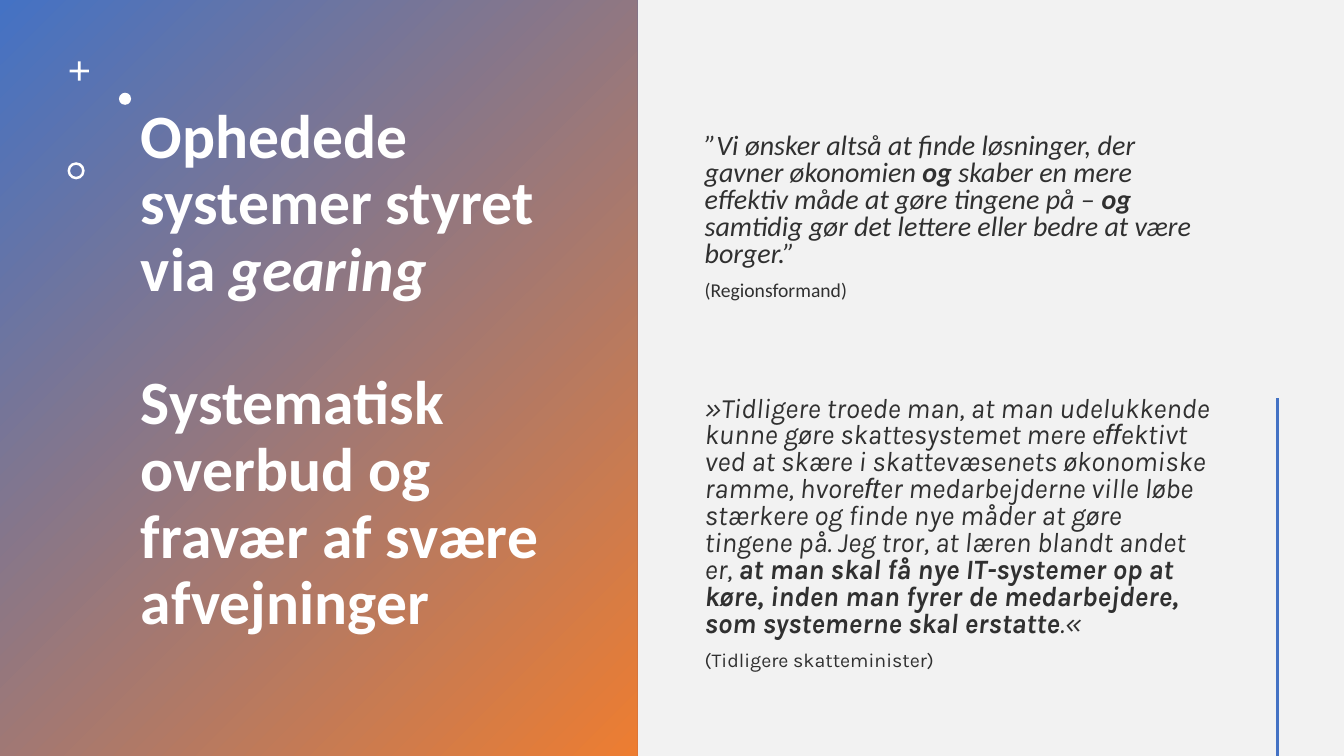
from typing import NamedTuple

from lxml import etree
from pptx import Presentation
from pptx.dml.color import RGBColor
from pptx.enum.shapes import MSO_CONNECTOR, MSO_SHAPE
from pptx.enum.text import MSO_ANCHOR
from pptx.oxml.ns import qn
from pptx.util import Inches, Pt

RECT = MSO_SHAPE.RECTANGLE
CROSS = MSO_SHAPE.CROSS
OVAL = MSO_SHAPE.OVAL
DONUT = MSO_SHAPE.DONUT
LINE = MSO_CONNECTOR.STRAIGHT
TOP = MSO_ANCHOR.TOP
MIDDLE = MSO_ANCHOR.MIDDLE

WHITE, PALE, INK = "FFFFFF", "F2F2F2", "303030"
BLUE, ORANGE = "4472C4", "ED7D31"


class Mark(NamedTuple):
    kind: MSO_SHAPE
    left: float
    top: float
    size: float
    adjust: float | None = None


class Run(NamedTuple):
    text: str
    bold: bool | None = None
    italic: bool | None = None
    font: str | None = None


class Para(NamedTuple):
    runs: list[Run]
    size: int
    font: str = "Calibri"
    bold: bool = False
    italic: bool = False
    before: int = 0


class Block(NamedTuple):
    box: tuple[float, float, float, float]
    anchor: MSO_ANCHOR
    color: str
    space: float
    paras: list[Para]


MARKS = [
    Mark(CROSS, 0.69, 0.61, 0.19, 0.43),
    Mark(OVAL, 1.18, 0.92, 0.12),
    Mark(DONUT, 0.67, 1.61, 0.17, 0.15),
]

TITLE = Block((1.3, 0.42, 4.38, 6.53), MIDDLE, WHITE, 0.9, [
    Para([Run("Ophedede systemer styret via "), Run("gearing", italic=True)], 44, bold=True),
    Para([Run("Systematisk overbud og fravær af svære afvejninger")], 44, bold=True, before=48),
])

QUOTES = Block((6.89, 1.28, 5.22, 5.6), TOP, INK, 0.8, [
    Para([
        Run("”Vi ønsker altså at finde løsninger, der gavner økonomien "),
        Run("og", bold=True),
        Run(" skaber en mere effektiv måde at gøre tingene på – "),
        Run("og", bold=True),
        Run(" samtidig gør det lettere eller bedre at være borger.”"),
    ], 20, italic=True),
    Para([Run("(Regionsformand)")], 14, before=10),
    Para([
        Run("»Tidligere troede man, at man udelukkende kunne gøre skattesystemet mere e"),
        Run("ff", font="Arial"),
        Run("ektivt ved at skære i skattevæsenets økonomiske ramme, hvore"),
        Run("ft", font="Arial"),
        Run("er medarbejderne ville løbe stærkere og finde nye måder at gøre tingene på. "
            "Jeg tror, at læren blandt andet er, "),
        Run("at man skal få nye IT-systemer op at køre, inden man fyrer de medarbejdere, "
            "som systemerne skal erstatte", bold=True),
        Run(".«"),
    ], 20, "Karla", italic=True, before=68),
    Para([Run("(Tidligere skatteminister)")], 14, "Karla", before=10),
])


def tint(code: str) -> RGBColor:
    return RGBColor.from_string(code)


def draw_panel(slide) -> None:
    panel = slide.shapes.add_shape(RECT, 0, 0, Inches(6.32), Inches(7.5))
    panel.shadow.inherit = False
    panel.line.fill.background()
    panel.fill.gradient()
    panel.fill.gradient_angle = 315
    for stop, code in zip(panel.fill.gradient_stops, (BLUE, ORANGE)):
        stop.color.rgb = tint(code)


def draw_mark(slide, mark: Mark) -> None:
    side = Inches(mark.size)
    shape = slide.shapes.add_shape(mark.kind, Inches(mark.left), Inches(mark.top), side, side)
    shape.shadow.inherit = False
    shape.line.fill.background()
    shape.fill.solid()
    shape.fill.fore_color.rgb = tint(WHITE)
    if mark.adjust is not None:
        shape.adjustments[0] = mark.adjust


def draw_text(slide, block: Block) -> None:
    frame = slide.shapes.add_textbox(*map(Inches, block.box)).text_frame
    frame.word_wrap = True
    frame.vertical_anchor = block.anchor
    for index, item in enumerate(block.paras):
        para = frame.add_paragraph() if index else frame.paragraphs[0]
        para.line_spacing = block.space
        para.space_before = Pt(item.before)
        font = para.font
        font.name, font.size = item.font, Pt(item.size)
        font.bold, font.italic = item.bold, item.italic
        font.color.rgb = tint(block.color)
        for part in item.runs:
            run = para.add_run()
            run.text = part.text
            if part.bold is not None:
                run.font.bold = part.bold
            if part.italic is not None:
                run.font.italic = part.italic
            if part.font:
                run.font.name = part.font


def draw_line(slide) -> None:
    line = slide.shapes.add_connector(
        LINE, Inches(12.67), Inches(3.95), Inches(12.67), Inches(7.5))
    line.line.color.rgb = tint(BLUE)
    line.line.width = Pt(2)
    etree.SubElement(line._element.spPr, qn("a:effectLst"))


def main() -> None:
    deck = Presentation()
    deck.slide_width, deck.slide_height = Inches(13.33), Inches(7.5)
    slide = deck.slides.add_slide(deck.slide_layouts[6])
    slide.background.fill.solid()
    slide.background.fill.fore_color.rgb = tint(PALE)
    draw_panel(slide)
    for mark in MARKS:
        draw_mark(slide, mark)
    for block in (TITLE, QUOTES):
        draw_text(slide, block)
    draw_line(slide)
    deck.save("out.pptx")


if __name__ == "__main__":
    main()
